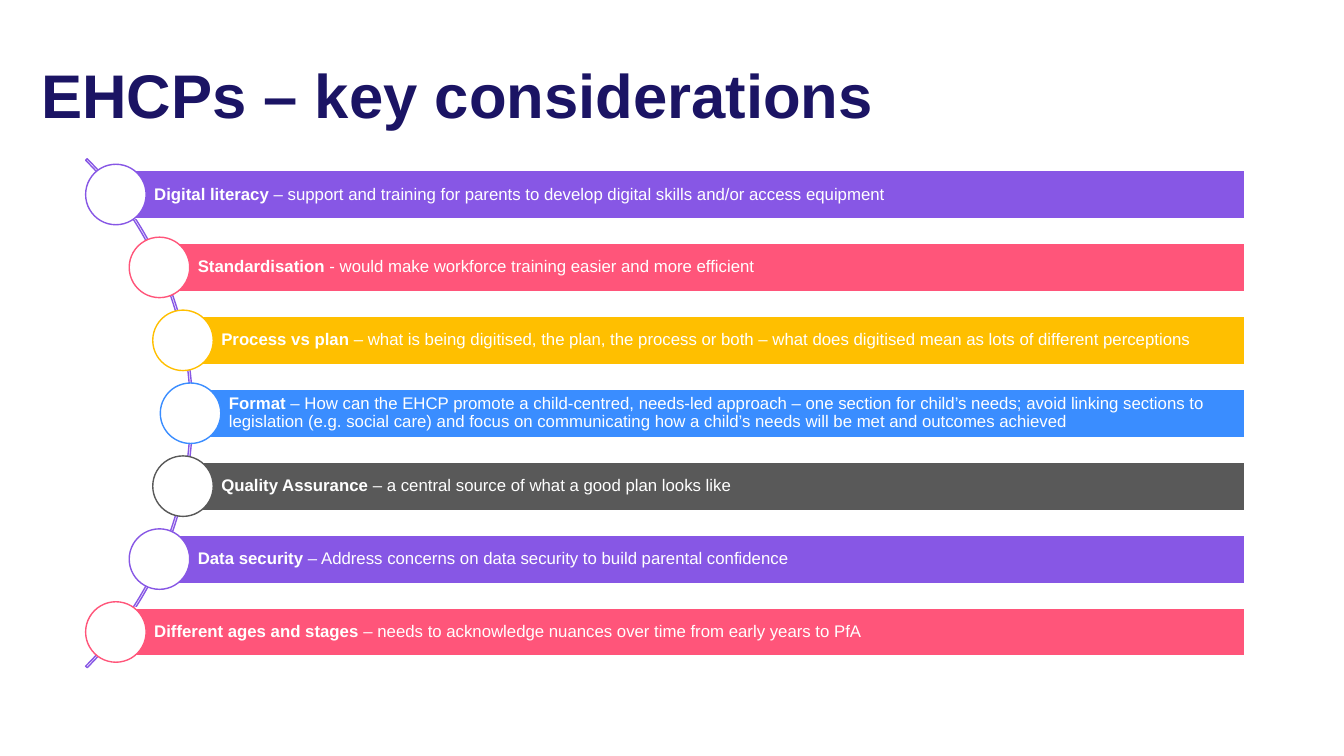
import math
from dataclasses import dataclass

import pptx
import pptx.dml.color
import pptx.enum.shapes
import pptx.enum.text
import pptx.shapes.autoshape
import pptx.slide
import pptx.text.text
import pptx.util

Inches = pptx.util.Inches
Shape = pptx.enum.shapes.MSO_SHAPE


@dataclass(frozen=True)
class Theme:
    font: str = "Arial"
    navy: str = "1B1464"
    purple: str = "8757E5"
    pink: str = "FF557A"
    amber: str = "FFBF00"
    blue: str = "3A8DFF"
    grey: str = "595959"
    white: str = "FFFFFF"
    title_size: float = 44
    body_size: float = 12
    line_width: float = 1


@dataclass(frozen=True)
class Consideration:
    heading: str
    detail: str
    color: str


THEME = Theme()
CONSIDERATIONS = [
    Consideration("Digital literacy ", "– support and training for parents to develop digital skills "
                  "and/or access equipment", THEME.purple),
    Consideration("Standardisation", " - would make workforce training easier and more efficient",
                  THEME.pink),
    Consideration("Process vs plan ", "– what is being digitised, the plan, the process or both – "
                  "what does digitised mean as lots of different perceptions", THEME.amber),
    Consideration("Format", " – How can the EHCP promote a child-centred, needs-led approach – "
                  "one section for child’s needs; avoid linking sections to legislation "
                  "(e.g. social care) and focus on communicating how a child’s needs will be met "
                  "and outcomes achieved", THEME.blue),
    Consideration("Quality Assurance ", "– a central source of what a good plan looks like",
                  THEME.grey),
    Consideration("Data security ", "– Address concerns on data security to build parental confidence",
                  THEME.purple),
    Consideration("Different ages and stages ", "– needs to acknowledge nuances over time "
                  "from early years to PfA", THEME.pink),
]

ARC_X, ARC_Y, ARC_SIZE = -1.66, 4.1, 7.14
TRACK_RADIUS = 3.55
FIRST_Y, LAST_Y = 1.93, 6.27
BAR_RIGHT, BAR_HEIGHT = 12.35, 0.48
CIRCLE_SIZE = 0.6


def rgb(color: str) -> pptx.dml.color.RGBColor:
    return pptx.dml.color.RGBColor.from_string(color)


def add_outlined(page: pptx.slide.Slide, kind: Shape, left: float, top: float, width: float,
                 height: float, *, line: str, fill: str | None = None
                 ) -> pptx.shapes.autoshape.Shape:
    shape = page.shapes.add_shape(kind, Inches(left), Inches(top), Inches(width), Inches(height))
    shape.shadow.inherit = False
    if fill is None:
        shape.fill.background()
    else:
        shape.fill.solid()
        shape.fill.fore_color.rgb = rgb(fill)
    shape.line.color.rgb = rgb(line)
    shape.line.width = pptx.util.Pt(THEME.line_width)
    return shape


def add_span(para: pptx.text.text._Paragraph, text: str, *, size: float, color: str,
             bold: bool = False) -> None:
    span = para.add_run()
    span.text = text
    span.font.name = THEME.font
    span.font.size = pptx.util.Pt(size)
    span.font.bold = bold
    span.font.color.rgb = rgb(color)


def prepare_text(box: pptx.shapes.autoshape.Shape) -> pptx.text.text._Paragraph:
    """Set wrapping, anchor and alignment; return the first paragraph."""
    frame = box.text_frame
    frame.word_wrap = True
    frame.vertical_anchor = pptx.enum.text.MSO_ANCHOR.MIDDLE
    para = frame.paragraphs[0]
    para.alignment = pptx.enum.text.PP_ALIGN.LEFT
    para.line_spacing = 0.9
    return para


def add_title(page: pptx.slide.Slide, text: str) -> None:
    title = page.shapes.title
    title.left, title.top = Inches(0.31), Inches(0.25)
    title.width, title.height = Inches(11.57), Inches(1.45)
    add_span(prepare_text(title), text, size=THEME.title_size, color=THEME.navy, bold=True)


def add_track(page: pptx.slide.Slide) -> None:
    """Draw the thin arc that the circles sit on."""
    arc = add_outlined(page, Shape.BLOCK_ARC, ARC_X - ARC_SIZE / 2, ARC_Y - ARC_SIZE / 2,
                       ARC_SIZE, ARC_SIZE, line=THEME.purple)
    for index, value in enumerate((189, 27, 0.003)):
        arc.adjustments[index] = value


def add_consideration(page: pptx.slide.Slide, item: Consideration, center_y: float) -> None:
    center_x = ARC_X + math.sqrt(TRACK_RADIUS ** 2 - (center_y - ARC_Y) ** 2)
    bar = add_outlined(page, Shape.RECTANGLE, center_x, center_y - BAR_HEIGHT / 2,
                       BAR_RIGHT - center_x, BAR_HEIGHT, line=THEME.white, fill=item.color)
    para = prepare_text(bar)
    frame = bar.text_frame
    frame.margin_left = Inches(0.38)
    frame.margin_top = frame.margin_right = frame.margin_bottom = Inches(0.03)
    add_span(para, item.heading, size=THEME.body_size, color=THEME.white, bold=True)
    add_span(para, item.detail, size=THEME.body_size, color=THEME.white)
    add_outlined(page, Shape.OVAL, center_x - CIRCLE_SIZE / 2, center_y - CIRCLE_SIZE / 2,
                 CIRCLE_SIZE, CIRCLE_SIZE, line=item.color, fill=THEME.white)


def main() -> None:
    deck = pptx.Presentation()
    deck.slide_width, deck.slide_height = Inches(13.33), Inches(7.5)
    page = deck.slides.add_slide(deck.slide_layouts.get_by_name("Title Only"))
    add_title(page, "EHCPs – key considerations")
    add_track(page)
    pitch = (LAST_Y - FIRST_Y) / (len(CONSIDERATIONS) - 1)
    for row, item in enumerate(CONSIDERATIONS):
        add_consideration(page, item, FIRST_Y + row * pitch)
    deck.save("out.pptx")


if __name__ == "__main__":
    main()
